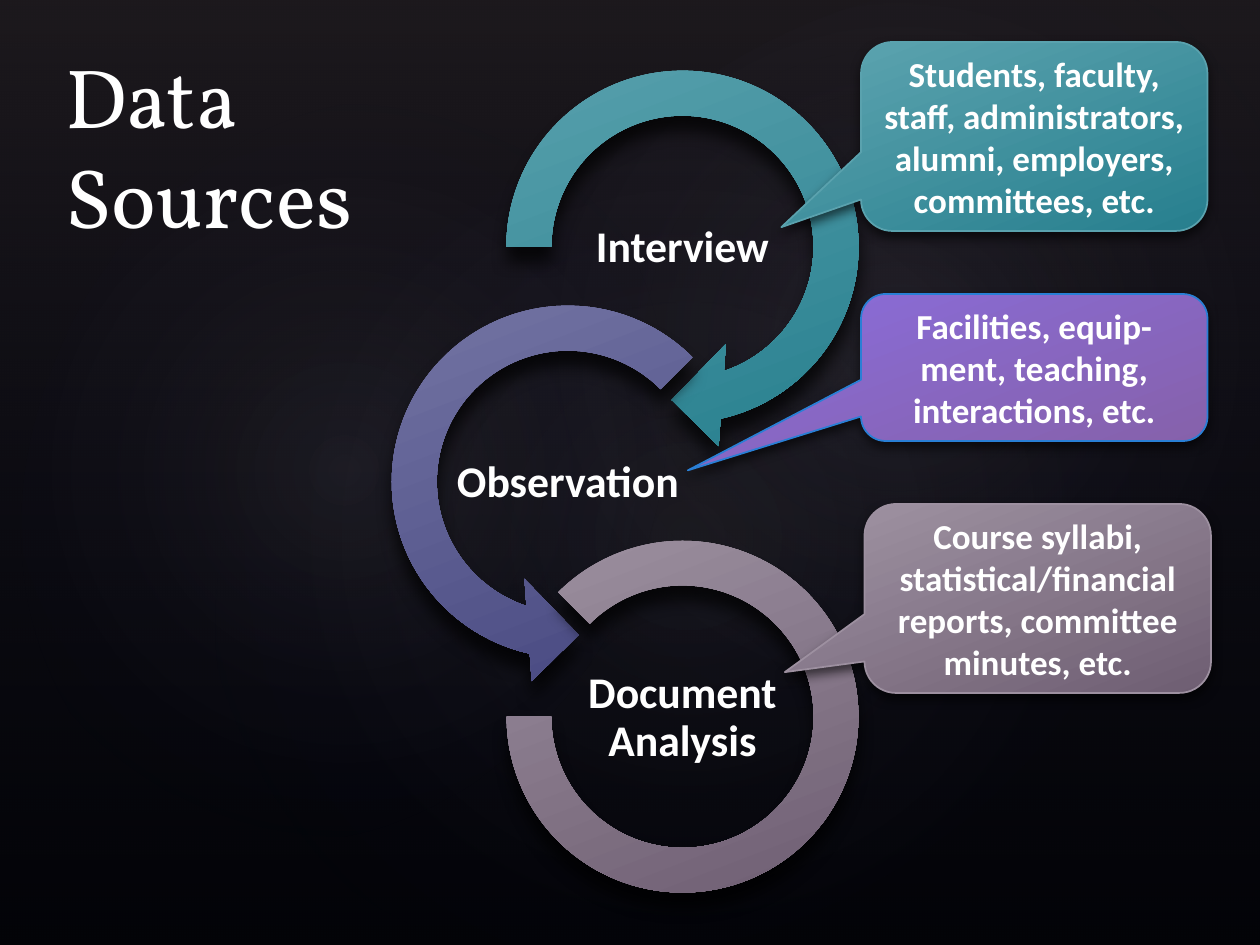
from dataclasses import dataclass

from lxml.etree import SubElement
from pptx import Presentation
from pptx.dml.color import RGBColor
from pptx.enum.shapes import MSO_SHAPE
from pptx.enum.text import MSO_ANCHOR, MSO_AUTO_SIZE, PP_ALIGN
from pptx.oxml.ns import qn
from pptx.util import Pt


@dataclass(frozen=True)
class Theme:
    background: str = "000000"
    text: str = "FFFFFF"
    shadow: str = "000000"
    veil: tuple = (("504652", 36), ("242852", 10))
    glow_edge: str = "242852"
    glow: str = "C4BCC6"
    teal: tuple = ("5AA2AE", "277F8E")
    indigo: tuple = ("7677A6", "44457E")
    mauve: tuple = ("9D90A0", "6E5E72")
    violet: tuple = ("896BD3", "8661AB")
    violet_edge: str = "297FD5"
    gradient_angle: int = 69
    title_font: str = "Vollkorn"
    body_font: str = "Calibri"
    title_size: int = 48
    label_size: int = 25
    callout_size: int = 20


THEME = Theme()


def add_color(parent, color, opacity=100):
    node = SubElement(parent, qn("a:srgbClr"), val=color)
    if opacity < 100:
        SubElement(node, qn("a:alpha"), val=str(opacity * 1000))


def set_gradient(shape, stops, angle=None):
    """Fill with (position, color, opacity) stops: linear at an angle, else radial."""
    shape.fill.gradient()
    gradient = shape._element.spPr.find(qn("a:gradFill"))
    for child in list(gradient):
        gradient.remove(child)
    stop_list = SubElement(gradient, qn("a:gsLst"))
    for position, color, opacity in stops:
        stop = SubElement(stop_list, qn("a:gs"), pos=str(position * 1000))
        add_color(stop, color, opacity)
    if angle is None:
        radial = SubElement(gradient, qn("a:path"), path="circle")
        SubElement(radial, qn("a:fillToRect"), l="50000", t="50000", r="50000", b="50000")
    else:
        SubElement(gradient, qn("a:lin"), ang=str(angle * 60000), scaled="0")


def set_shadow(shape, blur, distance, opacity):
    effects = shape._element.spPr.find(qn("a:effectLst"))
    outer = SubElement(effects, qn("a:outerShdw"), blurRad=str(Pt(blur)),
                       dist=str(Pt(distance)), dir="5400000", rotWithShape="0")
    add_color(outer, THEME.shadow, opacity)


def add_plain_shape(slide, kind, box, adjustments=()):
    shape = slide.shapes.add_shape(kind, *map(Pt, box))
    shape.shadow.inherit = False
    shape.line.fill.background()
    for index, value in enumerate(adjustments):
        shape.adjustments[index] = value
    return shape


def set_text(shape, text, font, size, bold=True, align=PP_ALIGN.CENTER,
             anchor=MSO_ANCHOR.MIDDLE):
    frame = shape.text_frame
    frame.word_wrap = True
    frame.auto_size = MSO_AUTO_SIZE.NONE
    frame.vertical_anchor = anchor
    frame.text = text
    paragraph = frame.paragraphs[0]
    paragraph.alignment = align
    paragraph.font.name = font
    paragraph.font.size = Pt(size)
    paragraph.font.bold = bold
    paragraph.font.color.rgb = RGBColor.from_string(THEME.text)
    return frame


def two_tone(colors):
    return [(0, colors[0], 100), (100, colors[1], 100)]


def add_backdrop(slide, box):
    slide.background.fill.solid()
    slide.background.fill.fore_color.rgb = RGBColor.from_string(THEME.background)
    left, top, width, height = box
    (upper, upper_opacity), (lower, lower_opacity) = THEME.veil
    veil = add_plain_shape(slide, MSO_SHAPE.RECTANGLE, box)
    set_gradient(veil, [(0, upper, upper_opacity), (100, lower, lower_opacity)], 90)
    glows = [
        ((108, 82, 570, 449), 328.7, 7),
        ((-21.5, 92, 436, 353), 294.3, 8),
        ((258, 9.5, 510.5, 374.5), 328.7, 8),
    ]
    for (x, y, w, h), rotation, opacity in glows:
        glow = add_plain_shape(slide, MSO_SHAPE.OVAL, (left + x, top + y, w, h))
        glow.rotation = rotation
        set_gradient(glow, [(0, THEME.glow, opacity), (58, THEME.glow_edge, 0)])


def add_title(slide, box):
    title = slide.shapes.title
    title.left, title.top, title.width, title.height = map(Pt, box)
    set_text(title, "Data\vSources", THEME.title_font, THEME.title_size,
             bold=False, align=PP_ALIGN.LEFT, anchor=MSO_ANCHOR.BOTTOM)
    slide.shapes._spTree.append(title._element)  # in front of the backdrop


def centered_box(center_x, center_y, width, height):
    return center_x - width / 2, center_y - height / 2, width, height


def add_source_chain(slide, box):
    """Three interlocking rings, alternating right and left, each around its label."""
    left, top, width, height = box
    arrow_size, arc_size = 234, 201
    right_x, left_x = left + width - arrow_size / 2, left + arrow_size / 2
    first_y = top + arrow_size / 2
    pitch = (height - arrow_size / 2 - arc_size / 2) / 2
    rings = [
        ("Interview", MSO_SHAPE.CIRCULAR_ARROW, right_x, arrow_size,
         (0.11, 11.42, 45, 108, 0.125), THEME.teal),
        ("Observation", MSO_SHAPE.LEFT_CIRCULAR_ARROW, left_x, arrow_size,
         (0.11, 11.42, 63, 189, 0.125), THEME.indigo),
        ("Document\vAnalysis", MSO_SHAPE.BLOCK_ARC, right_x, arc_size,
         (135, 108, 0.127), THEME.mauve),
    ]
    for row, (label, kind, x, size, adjustments, colors) in enumerate(rings):
        y = first_y + row * pitch
        ring = add_plain_shape(slide, kind, centered_box(x, y, size, size), adjustments)
        set_gradient(ring, two_tone(colors), THEME.gradient_angle)
        set_shadow(ring, blur=9, distance=9, opacity=70)

        caption = slide.shapes.add_textbox(*map(Pt, centered_box(x, y + 1, 130.5, 65)))
        frame = set_text(caption, label, THEME.body_font, THEME.label_size)
        frame.margin_left = frame.margin_right = Pt(1.25)
        frame.margin_top = frame.margin_bottom = Pt(1.25)
        frame.paragraphs[0].line_spacing = 0.9


def add_callout(slide, box, text, tip, colors, edge):
    callout = add_plain_shape(slide, MSO_SHAPE.ROUNDED_RECTANGULAR_CALLOUT, box,
                              (*tip, 0.167))
    set_gradient(callout, two_tone(colors), THEME.gradient_angle)
    callout.line.color.rgb = RGBColor.from_string(edge)
    callout.line.width = Pt(1)
    set_shadow(callout, blur=6, distance=3, opacity=60)
    set_text(callout, text, THEME.body_font, THEME.callout_size)


def main():
    deck = Presentation()
    deck.slide_width, deck.slide_height = Pt(720), Pt(540)
    slide = deck.slides.add_slide(deck.slide_layouts[5])
    add_backdrop(slide, (0, 0, 720, 540))
    add_source_chain(slide, (207.5, 24, 299.5, 486))
    add_title(slide, (30, 30, 654, 114))
    add_callout(slide, (492, 24, 198, 108),
                "Students, faculty, staff, administrators, alumni, employers, committees, etc.",
                (-0.73, 0.48), THEME.teal, THEME.teal[0])
    add_callout(slide, (492, 168, 198, 84),
                "Facilities, equip-ment, teaching, interactions, etc.",
                (-1, 0.7), THEME.violet, THEME.violet_edge)
    add_callout(slide, (494, 288, 198, 108),
                "Course syllabi, statistical/financial reports, committee minutes, etc.",
                (-0.73, 0.39), THEME.mauve, THEME.mauve[0])
    deck.save("out.pptx")


if __name__ == "__main__":
    main()
